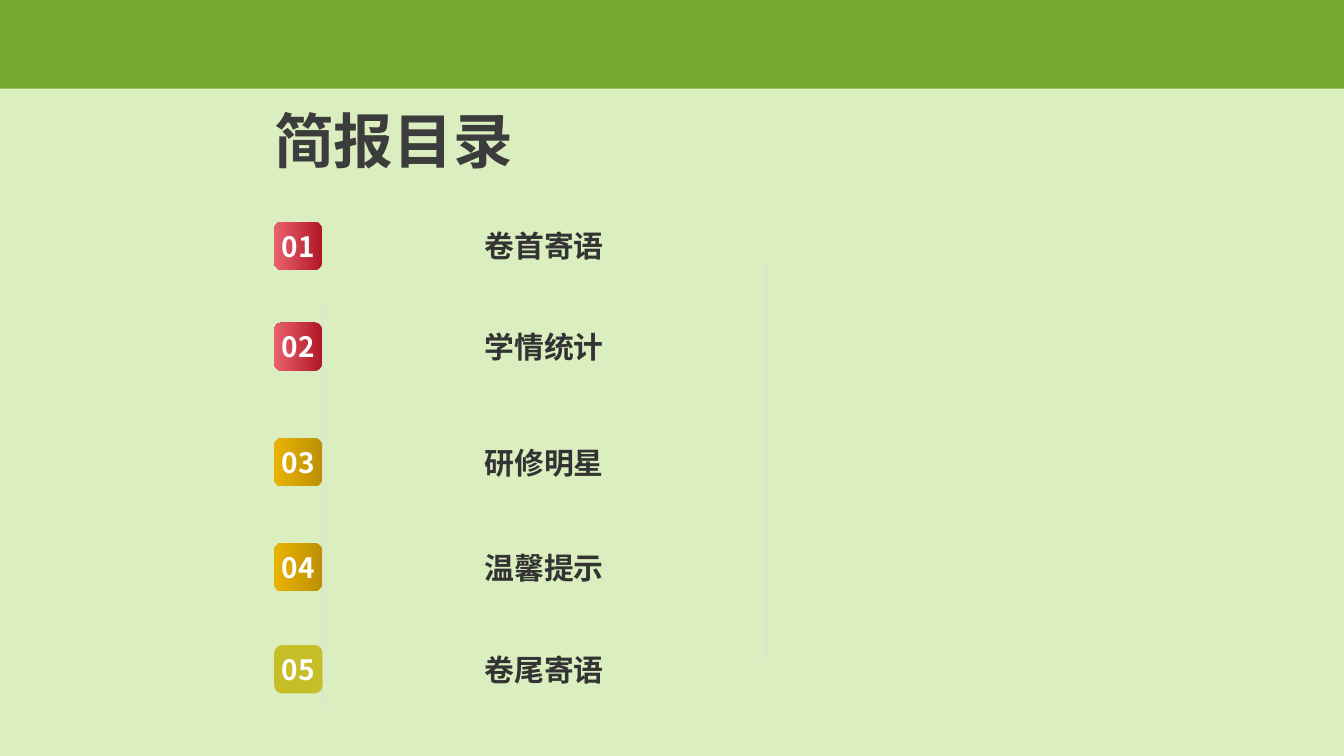
from dataclasses import dataclass

from lxml import etree
from pptx import Presentation
from pptx.dml.color import RGBColor
from pptx.enum.shapes import MSO_CONNECTOR, MSO_SHAPE
from pptx.enum.text import MSO_ANCHOR, MSO_AUTO_SIZE, PP_ALIGN
from pptx.oxml.ns import qn
from pptx.util import Inches, Pt

RECT, ROUNDED = MSO_SHAPE.RECTANGLE, MSO_SHAPE.ROUNDED_RECTANGLE
STRAIGHT = MSO_CONNECTOR.STRAIGHT
LEFT, CENTER = PP_ALIGN.LEFT, PP_ALIGN.CENTER
MIDDLE, NO_FIT = MSO_ANCHOR.MIDDLE, MSO_AUTO_SIZE.NONE

FONT = "Noto Sans CJK SC"
TITLE_ONLY = 5
SLIDE_W = 10
SLIDE_H = SLIDE_W * 9 / 16

# Columns of the contents list, in inches
BADGE_X, BADGE_SIZE = 2.04, 0.36
LABEL_X, LABEL_W, LABEL_H = 2.81, 2.48, 0.54

RED = ("B01826", "EA606D")
GOLD = ("BC9004", "E9B305")
LIME = ("C5BE27",)


@dataclass
class Entry:
    label: str
    center_y: float
    colors: tuple[str, ...]


@dataclass
class Divider:
    x: float
    top: float
    bottom: float


ENTRIES = [
    Entry("卷首寄语", 1.83, RED),
    Entry("学情统计", 2.58, RED),
    Entry("研修明星", 3.44, GOLD),
    Entry("温馨提示", 4.22, GOLD),
    Entry("卷尾寄语", 4.98, LIME),
]
DIVIDERS = [Divider(BADGE_X + BADGE_SIZE, 2.26, 5.28), Divider(5.7, 1.95, 4.92)]


def rgb(color: str) -> RGBColor:
    return RGBColor.from_string(color)


def paint(fill, colors: tuple[str, ...]) -> None:
    """Fill solid with one color, or as a right-to-left gradient with two."""
    if len(colors) == 1:
        fill.solid()
        fill.fore_color.rgb = rgb(colors[0])
        return
    fill.gradient()
    fill.gradient_angle = 180
    for stop, color in zip(fill.gradient_stops, colors):
        stop.color.rgb = rgb(color)


def write(sp, text: str, size: float, color: str, align=CENTER,
          inset: tuple[float, float] = (0, 0)) -> None:
    tf = sp.text_frame
    tf.text = text
    tf.word_wrap = True
    tf.auto_size = NO_FIT
    tf.vertical_anchor = MIDDLE
    tf.margin_left = tf.margin_right = Inches(inset[0])
    tf.margin_top = tf.margin_bottom = Inches(inset[1])
    p = tf.paragraphs[0]
    p.alignment = align
    font = p.runs[0].font
    font.size, font.bold, font.name = Pt(size), True, FONT
    font.color.rgb = rgb(color)
    # East Asian typeface
    etree.SubElement(p.runs[0]._r.rPr, qn("a:ea")).set("typeface", FONT)


def add_box(s, kind, left: float, top: float, width: float, height: float,
            colors: tuple[str, ...]):
    sp = s.shapes.add_shape(kind, *map(Inches, (left, top, width, height)))
    sp.shadow.inherit = False
    sp.line.fill.background()
    paint(sp.fill, colors)
    return sp


def add_entry(s, number: int, entry: Entry) -> None:
    badge = add_box(s, ROUNDED, BADGE_X, entry.center_y - BADGE_SIZE / 2,
                    BADGE_SIZE, BADGE_SIZE, entry.colors)
    write(badge, f"{number:02d}", 15, "FFFFFF")
    label = s.shapes.add_textbox(Inches(LABEL_X), Inches(entry.center_y - LABEL_H / 2),
                                 Inches(LABEL_W), Inches(LABEL_H))
    write(label, entry.label, 16, "333333", inset=(0.07, 0.04))


def add_divider(s, d: Divider) -> None:
    line = s.shapes.add_connector(STRAIGHT, *map(Inches, (d.x, d.top, d.x, d.bottom)))
    line.line.color.rgb = rgb("DDDDDD")
    line.line.width = Pt(0.5)
    etree.SubElement(line._element.spPr, qn("a:effectLst"))


def main() -> None:
    prs = Presentation()
    prs.slide_width, prs.slide_height = Inches(SLIDE_W), Inches(SLIDE_H)
    s = prs.slides.add_slide(prs.slide_layouts[TITLE_ONLY])

    # Background and top band
    paint(s.background.fill, ("DAEEBF",))
    add_box(s, RECT, 0, 0, SLIDE_W, 0.66, ("76AA30",))

    # Title
    title = s.shapes.title
    title.left, title.top = Inches(BADGE_X), Inches(0.69)
    title.width, title.height = Inches(2.63), Inches(0.7)
    write(title, "简报目录", 32, "3C3C3C", LEFT)

    # Contents list
    for d in DIVIDERS:
        add_divider(s, d)
    for number, entry in enumerate(ENTRIES, 1):
        add_entry(s, number, entry)

    prs.save("out.pptx")


if __name__ == "__main__":
    main()
